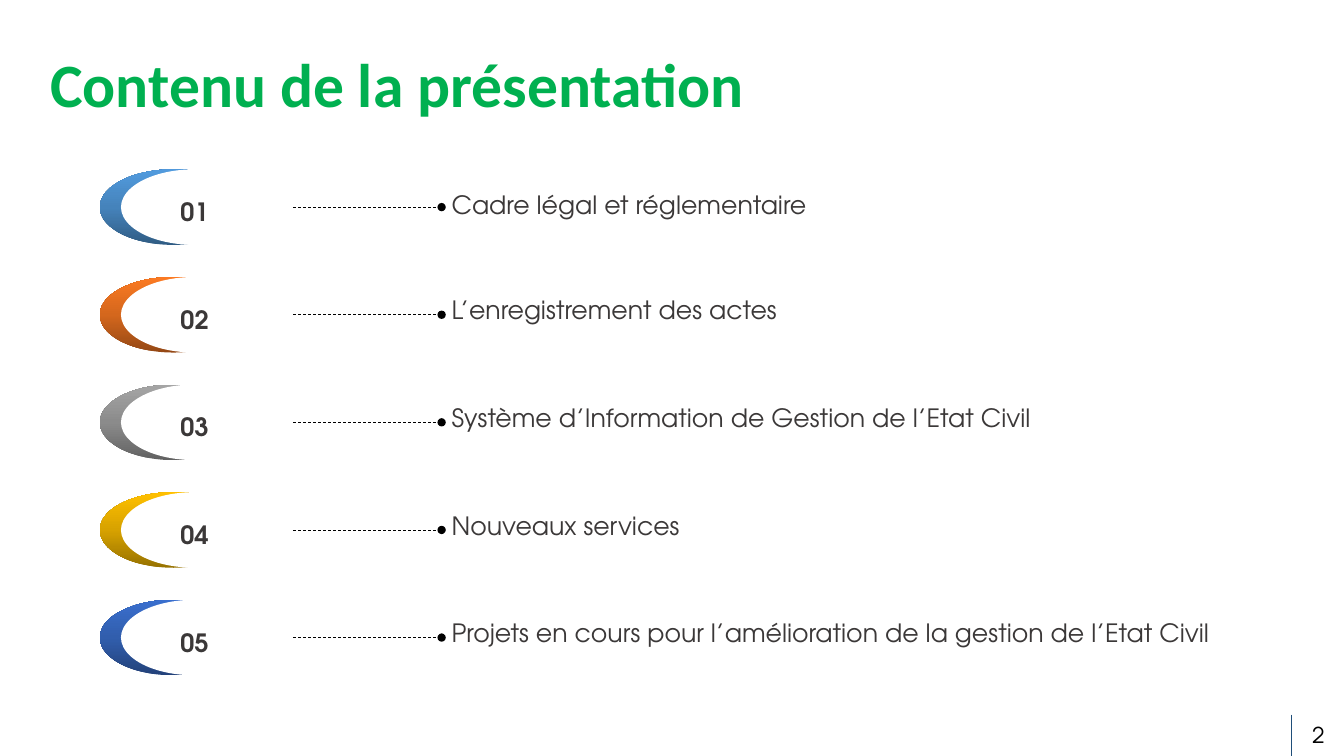
from copy import deepcopy
from dataclasses import dataclass

from lxml import etree
from pptx import Presentation
from pptx.dml.color import RGBColor
from pptx.enum.dml import MSO_LINE
from pptx.enum.shapes import MSO_CONNECTOR, MSO_SHAPE
from pptx.enum.text import MSO_ANCHOR, PP_ALIGN
from pptx.oxml.ns import qn
from pptx.util import Inches, Pt

OVAL = MSO_SHAPE.OVAL
STRAIGHT = MSO_CONNECTOR.STRAIGHT
DASH = MSO_LINE.DASH
MIDDLE, TOP = MSO_ANCHOR.MIDDLE, MSO_ANCHOR.TOP
LEFT, CENTER = PP_ALIGN.LEFT, PP_ALIGN.CENTER

COLORS = {
    "title": "00B050",
    "text": "3B3838",
    "white": "FFFFFF",
    "black": "000000",
    "border": "1F4E79",
}
BODY_FONT = "TeX Gyre Adventor"
TITLE_FORMAT = {"name": "Calibri", "size": Pt(44), "bold": True}
NUMBER_FORMAT = {"name": BODY_FONT, "size": Pt(18), "bold": True}
LABEL_FORMAT = {"name": BODY_FONT, "size": Pt(18), "bold": False}
PAGE_NUMBER_FORMAT = {"name": "Manrope", "size": Pt(16), "bold": False}

FIRST_TOP, ROW_PITCH = 1.68, 1.0675
CRESCENT_WIDTH, CRESCENT_HEIGHT = 1.46, 0.75


@dataclass(frozen=True)
class Topic:
    label: str
    gradient: tuple[str, str, str]
    label_drop: float


TOPICS = [
    Topic("Cadre légal et réglementaire", ("305C84", "4583BB", "529BDE"), 0.15),
    Topic("L’enregistrement des actes", ("954815", "D4671D", "FB7A23"), 0.12),
    Topic("Système d’Information de Gestion de l’Etat Civil",
          ("626262", "8B8B8B", "A5A5A5"), 0.13),
    Topic("Nouveaux services", ("977200", "D7A200", "FFC000"), 0.13),
    Topic("Projets en cours pour l’amélioration de la gestion de l’Etat Civil",
          ("23427A", "315EAD", "3A6FCE"), 0.12),
]


def rgb(value: str) -> RGBColor:
    return RGBColor.from_string(value)


def write_text(frame, text: str, formats: dict, color: str, align=LEFT) -> None:
    para = frame.paragraphs[0]
    para.alignment = align
    span = para.add_run()
    span.text = text
    for name, value in formats.items():
        setattr(span.font, name, value)
    span.font.color.rgb = rgb(color)


def add_text(page, box: tuple, text: str, formats: dict, color: str,
             align=LEFT, anchor=TOP):
    frame = page.shapes.add_textbox(*map(Inches, box)).text_frame
    frame.word_wrap = True
    frame.vertical_anchor = anchor
    write_text(frame, text, formats, color, align)
    return frame


def add_ellipse(page, left: float, top: float):
    ellipse = page.shapes.add_shape(
        OVAL, Inches(left), Inches(top),
        Inches(CRESCENT_WIDTH), Inches(CRESCENT_HEIGHT))
    ellipse.shadow.inherit = False
    ellipse.line.fill.background()
    return ellipse


def fill_gradient(shape, colors: tuple[str, str, str]) -> None:
    shape.fill.gradient()
    shape.fill.gradient_angle = 90
    first_stop = shape._element.spPr.find(".//" + qn("a:gs"))
    first_stop.addnext(deepcopy(first_stop))
    for index, (stop, color) in enumerate(zip(shape.fill.gradient_stops, colors)):
        stop.position = index / 2
        stop.color.rgb = rgb(color)


def add_leader(page, y: float) -> None:
    leader = page.shapes.add_connector(
        STRAIGHT, Inches(2.91), Inches(y), Inches(4.38), Inches(y))
    leader.line.color.rgb = rgb(COLORS["black"])
    leader.line.width = Pt(0.5)
    leader.line.dash_style = DASH
    etree.SubElement(leader.line._get_or_add_ln(), qn("a:tailEnd"), type="oval")
    etree.SubElement(leader._element.spPr, qn("a:effectLst"))


def add_topic(page, index: int, topic: Topic) -> None:
    top = FIRST_TOP + index * ROW_PITCH
    fill_gradient(add_ellipse(page, 0.99, top), topic.gradient)
    cover = add_ellipse(page, 1.2, top)
    cover.fill.solid()
    cover.fill.fore_color.rgb = rgb(COLORS["white"])
    add_text(page, (1.38, top + 0.22, 1.1, 0.38), f"{index + 1:02d}",
             NUMBER_FORMAT, COLORS["text"], CENTER)
    add_text(page, (4.38, top + topic.label_drop, 7.92, 0.38), topic.label,
             LABEL_FORMAT, COLORS["text"])
    add_leader(page, top + 0.375)


def set_borders(cell, visible: str) -> None:
    properties = cell._tc.get_or_add_tcPr()
    for position, side in enumerate(("lnL", "lnR", "lnT", "lnB")):
        border = etree.Element(qn(f"a:{side}"), w=str(Pt(1)))
        if side == visible:
            fill = etree.SubElement(border, qn("a:solidFill"))
            etree.SubElement(fill, qn("a:srgbClr"), val=COLORS["border"])
        else:
            etree.SubElement(border, qn("a:noFill"))
        properties.insert(position, border)


def add_footer(page) -> None:
    table = page.shapes.add_table(
        1, 3, Inches(0), Inches(7.09), Inches(13.33), Inches(0.41)).table
    table.first_row = False
    table.horz_banding = False
    for column, width in zip(table.columns, (0.27, 12.54, 0.53)):
        column.width = Inches(width)
    for cell, visible in zip(table.rows[0].cells, ("", "lnR", "lnL")):
        cell.fill.background()
        set_borders(cell, visible)
    number = table.cell(0, 2)
    number.vertical_anchor = MIDDLE
    write_text(number.text_frame, "2", PAGE_NUMBER_FORMAT, COLORS["black"], CENTER)


def main() -> None:
    deck = Presentation()
    deck.slide_width, deck.slide_height = Inches(13.33), Inches(7.5)
    page = deck.slides.add_slide(deck.slide_layouts[6])
    title = add_text(page, (0.4, 0.14, 12.53, 1.45), "Contenu de la présentation",
                     TITLE_FORMAT, COLORS["title"], anchor=MIDDLE)
    title.paragraphs[0].line_spacing = 0.9
    for index, topic in enumerate(TOPICS):
        add_topic(page, index, topic)
    add_footer(page)
    deck.save("out.pptx")


if __name__ == "__main__":
    main()
